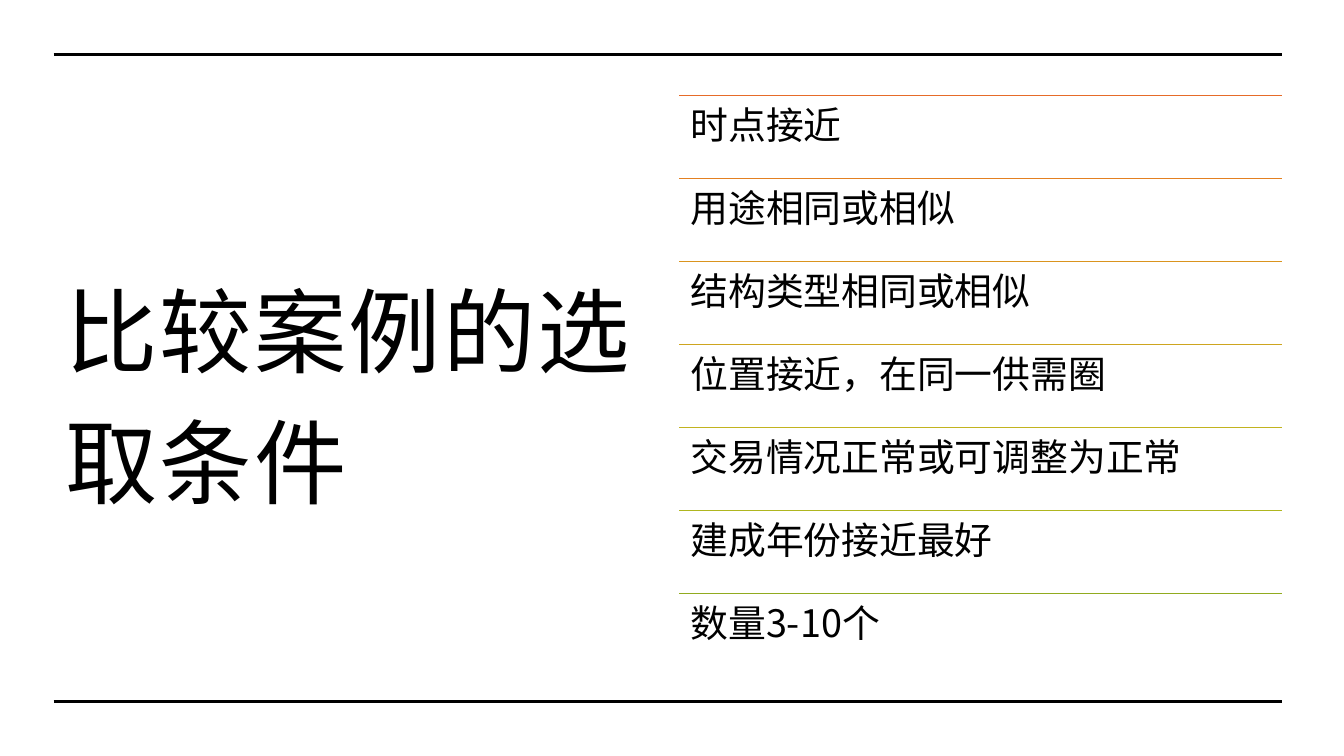
from lxml import etree
from pptx import Presentation
from pptx.dml.color import RGBColor
from pptx.enum.shapes import MSO_CONNECTOR
from pptx.enum.text import MSO_ANCHOR
from pptx.oxml.ns import qn
from pptx.util import Cm, Pt

STRAIGHT = MSO_CONNECTOR.STRAIGHT
TOP = MSO_ANCHOR.TOP
MIDDLE = MSO_ANCHOR.MIDDLE

FONT = "Noto Sans CJK SC"
BLACK = "000000"
LEFT, RIGHT = 1.35, 32.31
FRAME_RULES = (1.37, 17.68)
LIST_LEFT, LIST_TOP = 17.12, 2.41
ROW_HEIGHT = 2.09
CONDITIONS = (
    ("时点接近", "E66B29"),
    ("用途相同或相似", "E38021"),
    ("结构类型相同或相似", "DA941E"),
    ("位置接近，在同一供需圈", "CEA51F"),
    ("交易情况正常或可调整为正常", "C2B31F"),
    ("建成年份接近最好", "AFB61F"),
    ("数量3-10个", "91AB1F"),
)


def color(value):
    """Return the colour for a hex string."""
    return RGBColor.from_string(value)


def add_rule(slide, left, top, line_color, width):
    """Draw a horizontal line from left to the right margin."""
    rule = slide.shapes.add_connector(STRAIGHT, Cm(left), Cm(top), Cm(RIGHT), Cm(top))
    rule.line.color.rgb = color(line_color)
    rule.line.width = Pt(width)
    etree.SubElement(rule._element.spPr, qn("a:effectLst"))


def add_text(slide, box, text, size, line_spacing, inset, anchor=TOP, tracking=0):
    """Add a wrapped text box with one paragraph."""
    shape = slide.shapes.add_textbox(*(Cm(length) for length in box))
    frame = shape.text_frame
    frame.word_wrap = True
    frame.vertical_anchor = anchor
    frame.margin_left = frame.margin_right = Cm(inset)
    frame.margin_top = frame.margin_bottom = Cm(inset)
    paragraph = frame.paragraphs[0]
    paragraph.line_spacing = line_spacing
    run = paragraph.add_run()
    run.text = text
    run.font.size = Pt(size)
    run.font.name = FONT
    run.font.color.rgb = color(BLACK)
    properties = run.font._element
    properties.set("lang", "zh-CN")
    properties.set("spc", str(round(tracking * 100)))
    etree.SubElement(properties, qn("a:ea")).set("typeface", FONT)


def add_condition(slide, index, text, line_color):
    """Add one row of the list with its coloured rule."""
    top = LIST_TOP + index * ROW_HEIGHT
    add_rule(slide, LIST_LEFT, top, line_color, 1)
    box = (LIST_LEFT, top, RIGHT - LIST_LEFT, ROW_HEIGHT)
    add_text(slide, box, text, 27, 0.9, 0.28)


def main():
    """Build the slide and save it."""
    presentation = Presentation()
    presentation.slide_width = Cm(33.87)
    presentation.slide_height = Cm(19.05)
    slide = presentation.slides.add_slide(presentation.slide_layouts[6])
    title_box = (LEFT, LIST_TOP, 15.6, 14.6)
    add_text(slide, title_box, "比较案例的选取条件", 66, 1.18, 0.3, MIDDLE, 1.5)
    for top in FRAME_RULES:
        add_rule(slide, LEFT, top, BLACK, 2.25)
    for index, (text, line_color) in enumerate(CONDITIONS):
        add_condition(slide, index, text, line_color)
    presentation.save("out.pptx")


if __name__ == "__main__":
    main()
